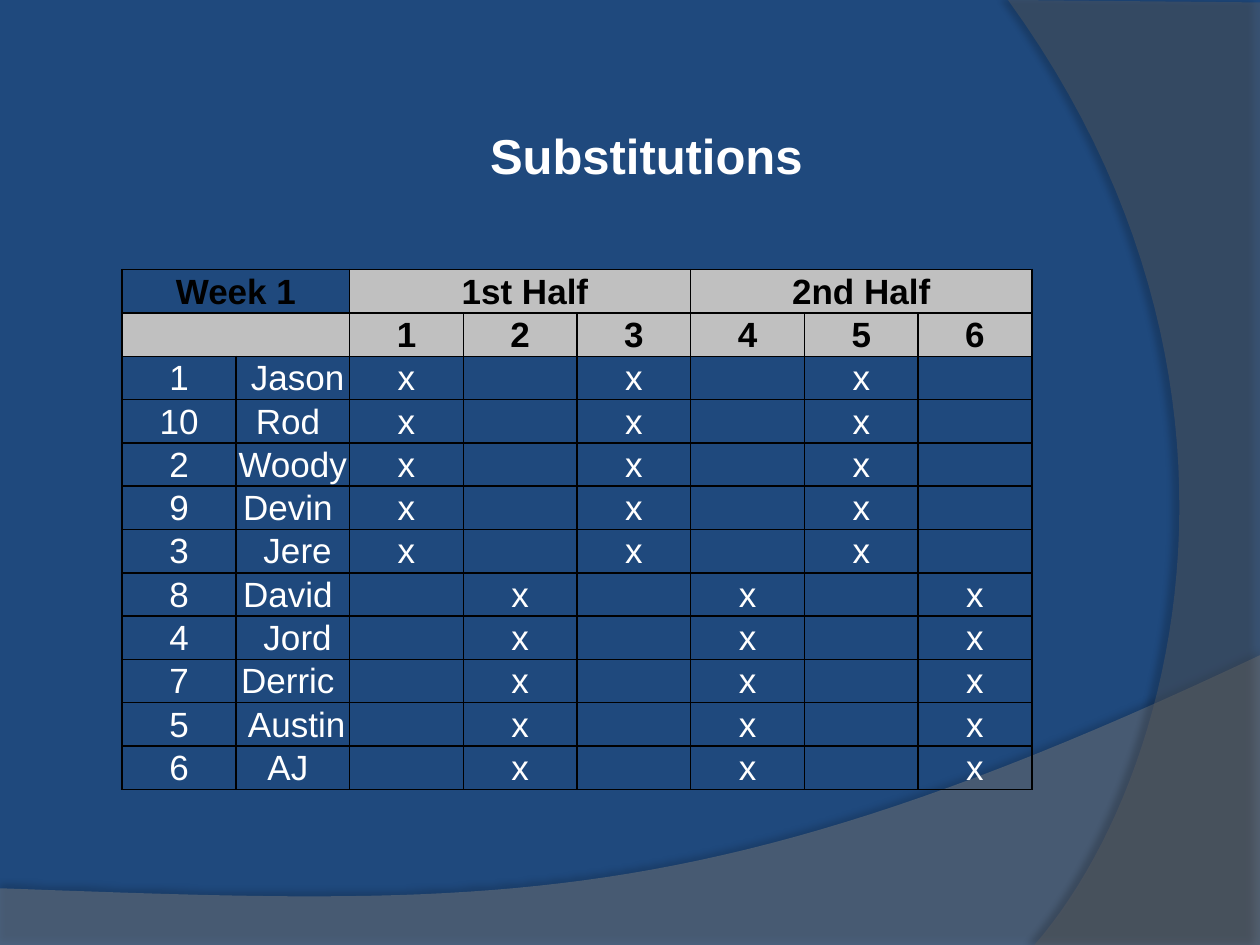
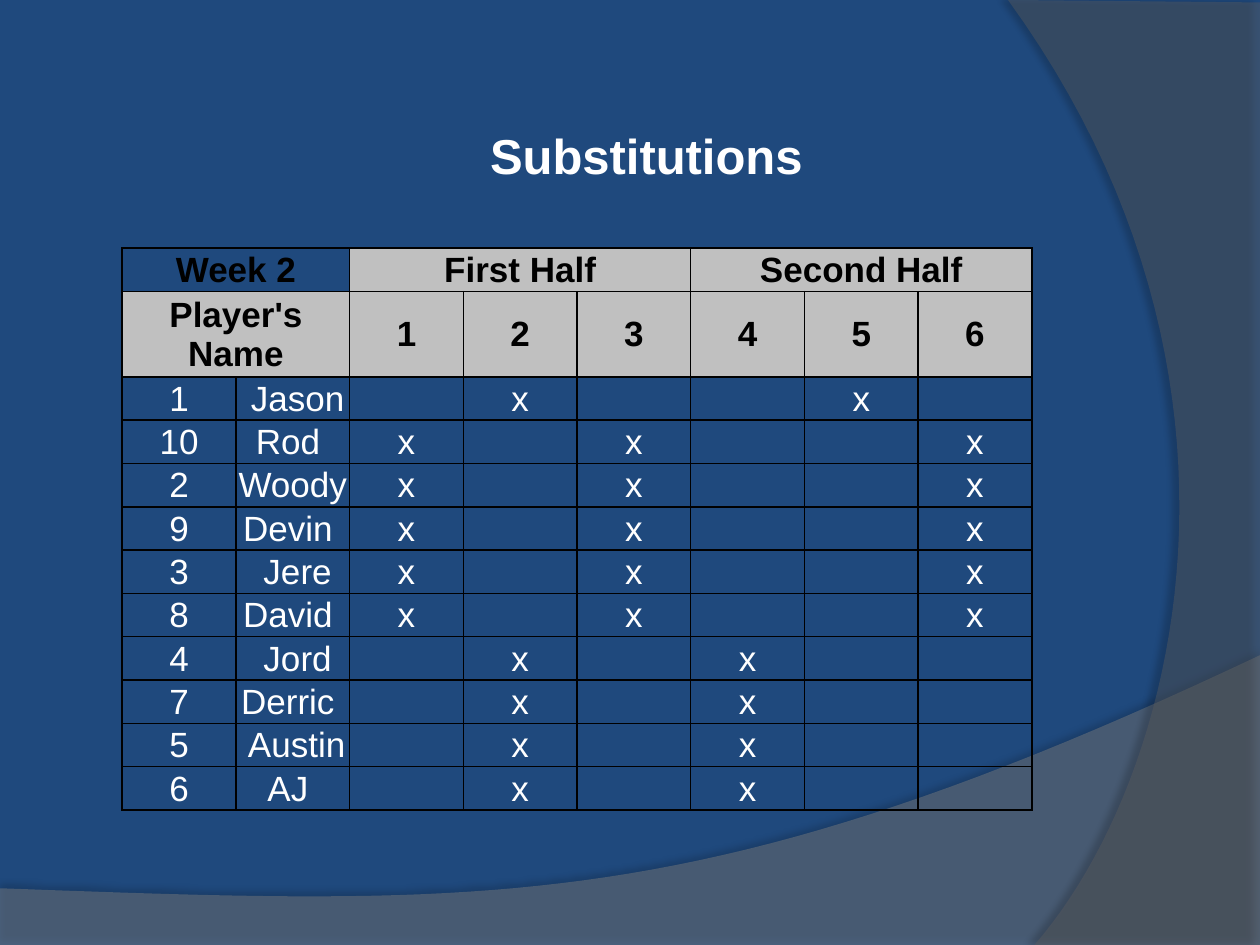
from lxml.etree import SubElement
from pptx import Presentation
from pptx.dml.color import RGBColor
from pptx.enum.text import MSO_ANCHOR as Anchor, PP_ALIGN as Align
from pptx.oxml.ns import qn
from pptx.util import Inches, Pt

NAVY, WHITE, BLACK, SILVER = "1F497D", "FFFFFF", "000000", "C0C0C0"
FONT = "Arial"
CURVE_STEPS = 48

PLAYERS = [("1", " Jason"), ("10", "Rod "), ("2", "Woody"), ("9", "Devin "),
           ("3", " Jere"), ("8", "David "), ("4", " Jord"), ("7", "Derric "),
           ("5", " Austin"), ("6", "AJ ")]
PERIODS = "123456"

WEEKS = [
    {"top": 2.14, "week": "Week 1", "halves": (" 1st Half", "2nd Half"),
     "name_header": "", "turns": ["135"] * 5 + ["246"] * 5},
    {"top": 1.97, "week": "Week 2", "halves": ("First Half", "Second Half"),
     "name_header": "Player's Name",
     "turns": ["25"] + ["136"] * 5 + ["24"] * 4},
]


def rgb(value):
    return RGBColor.from_string(value)


def write(frame, text, size=20, color=WHITE, bold=False):
    paragraph = frame.paragraphs[0]
    paragraph.alignment = Align.CENTER
    run = paragraph.add_run()
    run.text = text
    run.font.name = FONT
    run.font.size = Pt(size)
    run.font.bold = bold
    run.font.color.rgb = rgb(color)


def curve(start, control_1, control_2, end):
    points = []
    for step in range(CURVE_STEPS + 1):
        t = step / CURVE_STEPS
        weights = (1 - t) ** 3, 3 * t * (1 - t) ** 2, 3 * t ** 2 * (1 - t), t ** 3
        points.append(tuple(
            sum(w * value for w, value in zip(weights, axis))
            for axis in zip(start, control_1, control_2, end)))
    return points


def add_color(parent, color, alpha=100):
    node = SubElement(parent, qn("a:srgbClr"), val=color)
    if alpha < 100:
        SubElement(node, qn("a:alpha"), val=str(alpha * 1000))


class Deck:
    def __init__(self):
        self.prs = Presentation()
        self.prs.slide_width, self.prs.slide_height = Inches(10), Inches(7.5)
        backdrop = self.prs.slide_master.background.fill
        backdrop.solid()
        backdrop.fore_color.rgb = rgb(NAVY)
        self.slide = None

    def new_slide(self):
        self.slide = self.prs.slides.add_slide(self.prs.slide_layouts[6])
        self.wave([(0, 7.51), (10, 7.51)]
                  + curve((10, 5.2), (5.59, 7.29), (3.91, 7.19), (0, 7.05)),
                  "7F7F7F", 45, shade=35, distance=3.5, angle=270)
        self.wave([(10, 0.02), (10, 7.5)]
                  + curve((8.21, 7.5), (9.35, 6.19), (10.18, 3), (8, 0)),
                  "5E5E5E", 40, shade=45, distance=4, angle=180)

    def wave(self, points, color, alpha, shade, distance, angle):
        corners = [(Inches(x), Inches(y)) for x, y in points]
        builder = self.slide.shapes.build_freeform(*corners[0])
        builder.add_line_segments(corners[1:], close=True)
        band = builder.convert_to_shape()
        band.line.fill.background()
        band.fill.solid()
        band.fill.fore_color.rgb = rgb(color)
        properties = band._element.spPr
        fill = properties.find(qn("a:solidFill"))
        fill.clear()
        add_color(fill, color, alpha)
        effects = SubElement(properties, qn("a:effectLst"))
        shadow = SubElement(effects, qn("a:outerShdw"), blurRad=str(Pt(4)),
                            dist=str(Pt(distance)), dir=str(angle * 60000),
                            algn="ctr", rotWithShape="0")
        add_color(shadow, BLACK, shade)

    def title(self, text):
        box = self.slide.shapes.add_textbox(
            Inches(1.17), Inches(0.83), Inches(7.92), Inches(0.8))
        box.text_frame.word_wrap = True
        box.text_frame.vertical_anchor = Anchor.MIDDLE
        write(box.text_frame, text, size=28, bold=True)

    def cell(self, cell, text="", fill=None, **style):
        cell.margin_left = cell.margin_right = cell.margin_top = Inches(0.01)
        cell.margin_bottom = 0
        cell.vertical_anchor = Anchor.MIDDLE
        properties = cell._tc.get_or_add_tcPr()
        for side in "LRTB":
            border = SubElement(properties, qn(f"a:ln{side}"), w=str(Pt(1)))
            add_color(SubElement(border, qn("a:solidFill")), BLACK)
        if fill:
            cell.fill.solid()
            cell.fill.fore_color.rgb = rgb(fill)
        else:
            cell.fill.background()
        if text:
            write(cell.text_frame, text, **style)

    def schedule(self, top, week, halves, name_header, turns):
        first, second = halves
        headers = [[week, "", first, "", "", second, "", ""],
                   [name_header, "", *PERIODS]]
        lineup = [[number, name, *("x" if p in turn else "" for p in PERIODS)]
                  for (number, name), turn in zip(PLAYERS, turns)]
        rows = headers + lineup
        table = self.slide.shapes.add_table(
            len(rows), len(rows[0]), Inches(0.97), Inches(top),
            Inches(7.22), Inches(4)).table
        table.first_row = table.horz_banding = False
        for r, row in enumerate(rows):
            is_header = r < len(headers)
            for c, text in enumerate(row):
                is_week = r == 0 and c < 2
                self.cell(table.cell(r, c), text,
                          fill=SILVER if is_header and not is_week else None,
                          color=BLACK if is_header else WHITE, bold=is_header)
        for r, start, end in ((0, 0, 1), (0, 2, 4), (0, 5, 7), (1, 0, 1)):
            table.cell(r, start).merge(table.cell(r, end))


def main():
    deck = Deck()
    for week in WEEKS:
        deck.new_slide()
        deck.title("Substitutions")
        deck.schedule(**week)
    deck.prs.save("out.pptx")


if __name__ == "__main__":
    main()
